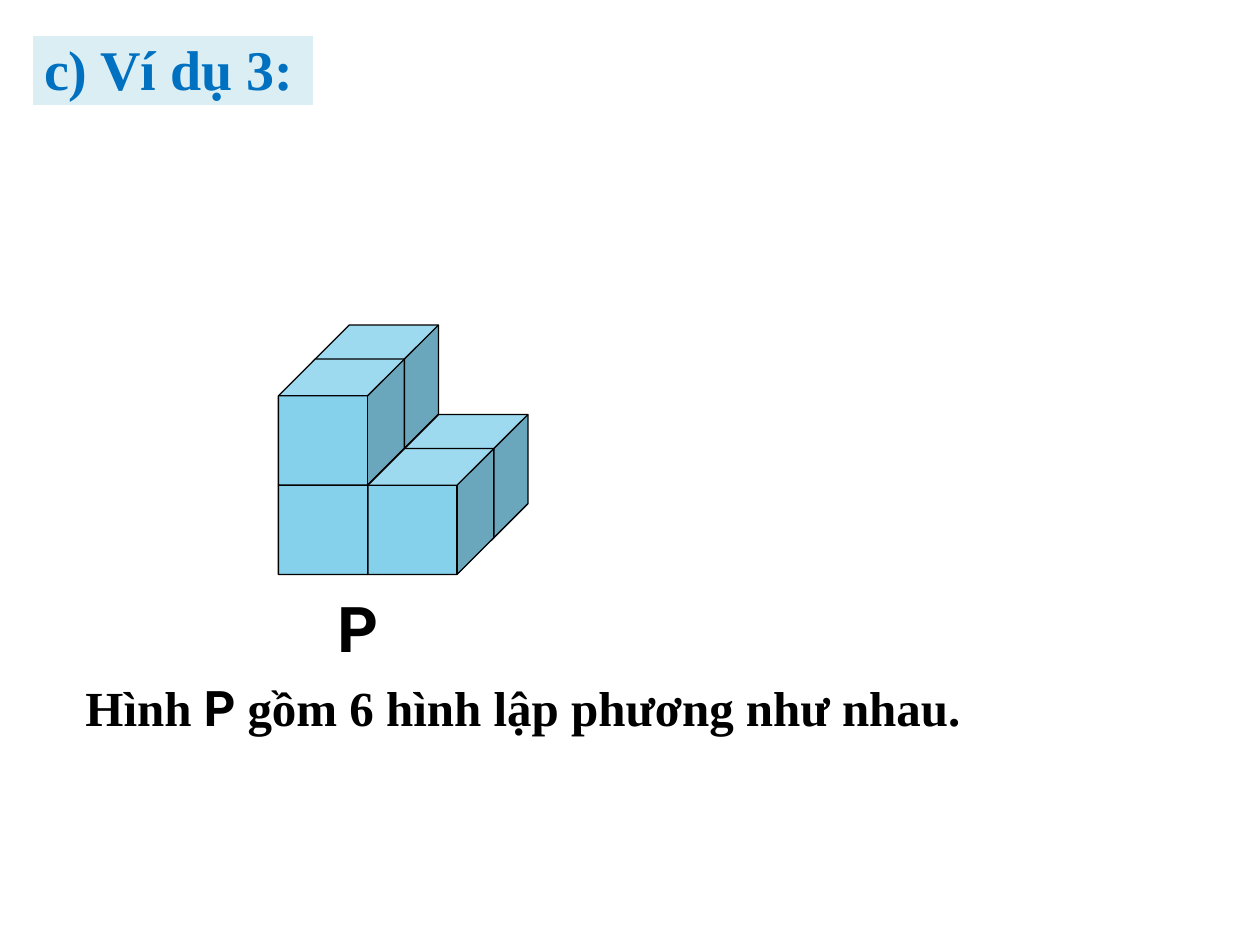
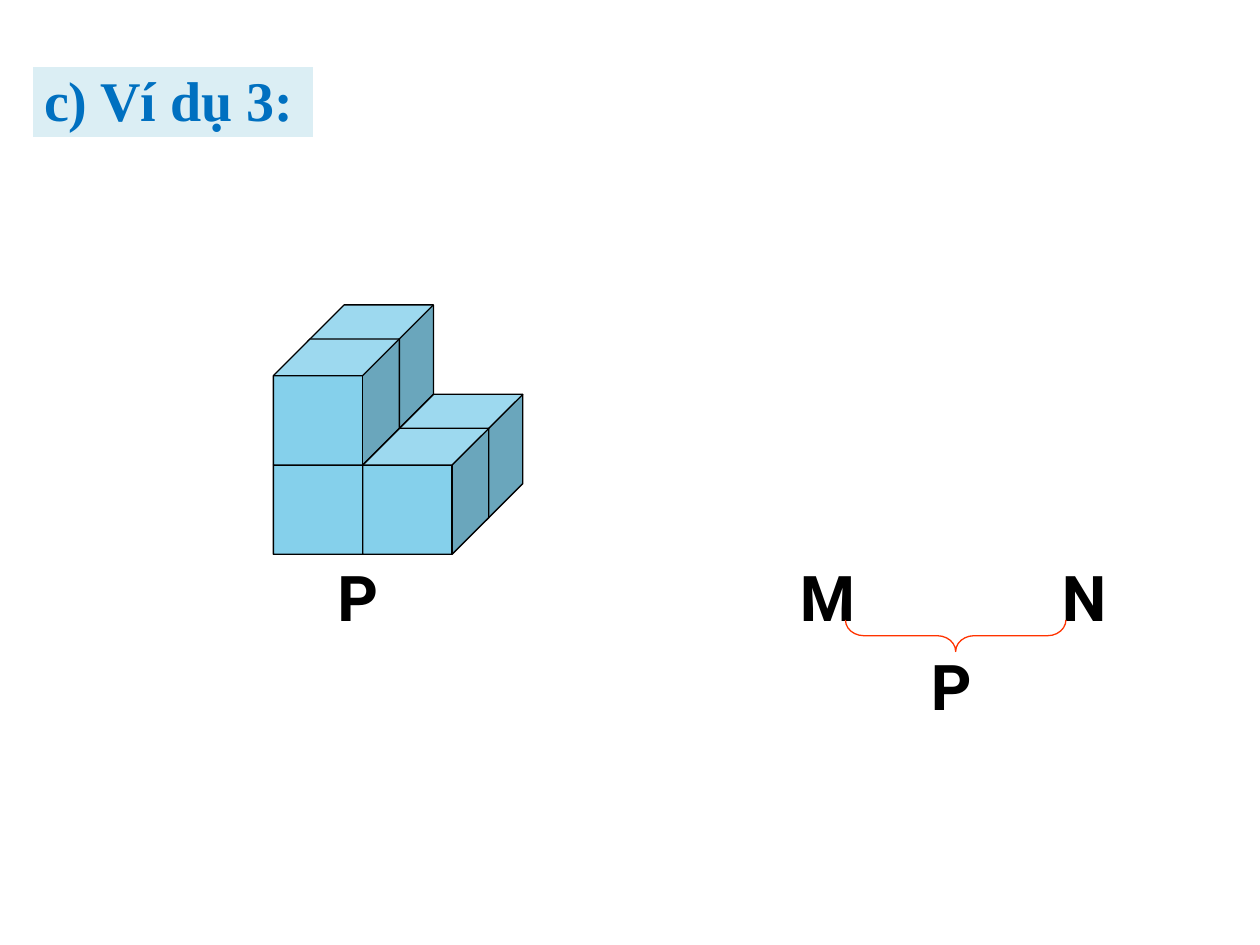
from pptx import Presentation
from pptx.dml.color import RGBColor
from pptx.enum.shapes import MSO_SHAPE
from pptx.enum.text import MSO_ANCHOR, MSO_AUTO_SIZE, PP_ALIGN
from pptx.util import Inches, Pt

CUBE, BRACE = MSO_SHAPE.CUBE, MSO_SHAPE.LEFT_BRACE
TOP, LEFT, NO_FIT = MSO_ANCHOR.TOP, PP_ALIGN.LEFT, MSO_AUTO_SIZE.NONE

COLORS = {
    "title": "0070C0", "band": "DBEEF4", "band_edge": "FFFFFF",
    "cube": "85D0EB", "ink": "000000", "brace": "FF3300",
}
SERIF, SANS = "Times New Roman", "Roboto"
TITLE = "c) Ví dụ 3:"
TITLE_FONT = {"name": SERIF, "size": Pt(32), "bold": True}
TITLE_FRAME = {
    "word_wrap": False, "auto_size": NO_FIT, "vertical_anchor": TOP,
    "margin_left": Inches(0.1), "margin_top": 0, "margin_bottom": 0,
}
LETTER_SIZE, SENTENCE_SIZE = 36, 28

# Cubes from back to front: (column, level, depth)
CUBES = [(0, 0, 1), (0, 0, 0), (0, 1, 1), (0, 1, 0), (1, 0, 1), (1, 0, 0)]
CUBE_SIDE, CUBE_SLANT = 1, 0.292
FACE_STEP, DEPTH_STEP = 0.71, 0.27

SLIDES = [
    {
        "title_top": 0.27,
        "solid_at": (2.21, 3.56),
        "labels": [
            ((2.58, 4.63, 0.58, 0.71), LETTER_SIZE, [("P", SANS)]),
            ((0.58, 5.33, 7.75, 0.57), SENTENCE_SIZE,
             [("Hình ", SERIF), ("P ", SANS),
              ("gồm 6 hình lập phương như nhau.", SERIF)]),
        ],
    },
    {
        "title_top": 0.52,
        "solid_at": (2.17, 3.4),
        "labels": [
            ((2.58, 4.38, 0.58, 0.71), LETTER_SIZE, [("P", SANS)]),
            ((6.25, 4.38, 0.75, 0.71), LETTER_SIZE, [("M", SANS)]),
            ((8.33, 4.38, 0.67, 0.71), LETTER_SIZE, [("N", SANS)]),
            ((7.29, 5.09, 0.58, 0.71), LETTER_SIZE, [("P", SANS)]),
        ],
        "brace_at": (7.46, 4.17, 0.25, 1.75),
    },
]


def rgb(name):
    return RGBColor.from_string(COLORS[name])


def apply(target, values):
    for name, value in values.items():
        setattr(target, name, value)


def paint(shape, fill, line, width):
    if fill:
        shape.fill.solid()
        shape.fill.fore_color.rgb = rgb(fill)
    else:
        shape.fill.background()
    shape.line.color.rgb = rgb(line)
    shape.line.width = Pt(width)


def add_title(slide, top):
    title = slide.shapes.title
    apply(title, {"left": Inches(0.25), "top": Inches(top),
                  "width": Inches(2.25), "height": Inches(0.58)})
    paint(title, "band", "band_edge", 2)
    apply(title.text_frame, TITLE_FRAME)
    title.text_frame.text = TITLE
    paragraph = title.text_frame.paragraphs[0]
    paragraph.alignment = LEFT
    apply(paragraph.font, TITLE_FONT)
    paragraph.font.color.rgb = rgb("title")


def add_solid(slide, left, top):
    """Stack the cubes; (left, top) is the corner of the front bottom-left one."""
    for column, level, depth in CUBES:
        x = left + column * FACE_STEP + depth * DEPTH_STEP
        y = top - level * FACE_STEP - depth * DEPTH_STEP
        cube = slide.shapes.add_shape(
            CUBE, Inches(x), Inches(y), Inches(CUBE_SIDE), Inches(CUBE_SIDE))
        cube.adjustments[0] = CUBE_SLANT
        cube.shadow.inherit = False
        paint(cube, "cube", "ink", 0.75)


def add_label(slide, box, size, parts):
    frame = slide.shapes.add_textbox(*map(Inches, box)).text_frame
    frame.word_wrap = True
    for text, font_name in parts:
        run = frame.paragraphs[0].add_run()
        run.text = text
        apply(run.font, {"name": font_name, "size": Pt(size), "bold": True})
        run.font.color.rgb = rgb("ink")


def add_brace(slide, box):
    brace = slide.shapes.add_shape(BRACE, *map(Inches, box))
    brace.rotation = 270
    brace.adjustments[0] = 0.583
    brace.shadow.inherit = False
    paint(brace, None, "brace", 0.75)


def main():
    deck = Presentation()
    deck.slide_width, deck.slide_height = Inches(10), Inches(7.5)
    title_only = deck.slide_layouts.get_by_name("Title Only")
    for content in SLIDES:
        slide = deck.slides.add_slide(title_only)
        add_title(slide, content["title_top"])
        add_solid(slide, *content["solid_at"])
        for label in content["labels"]:
            add_label(slide, *label)
        if "brace_at" in content:
            add_brace(slide, content["brace_at"])
    deck.save("out.pptx")


if __name__ == "__main__":
    main()
